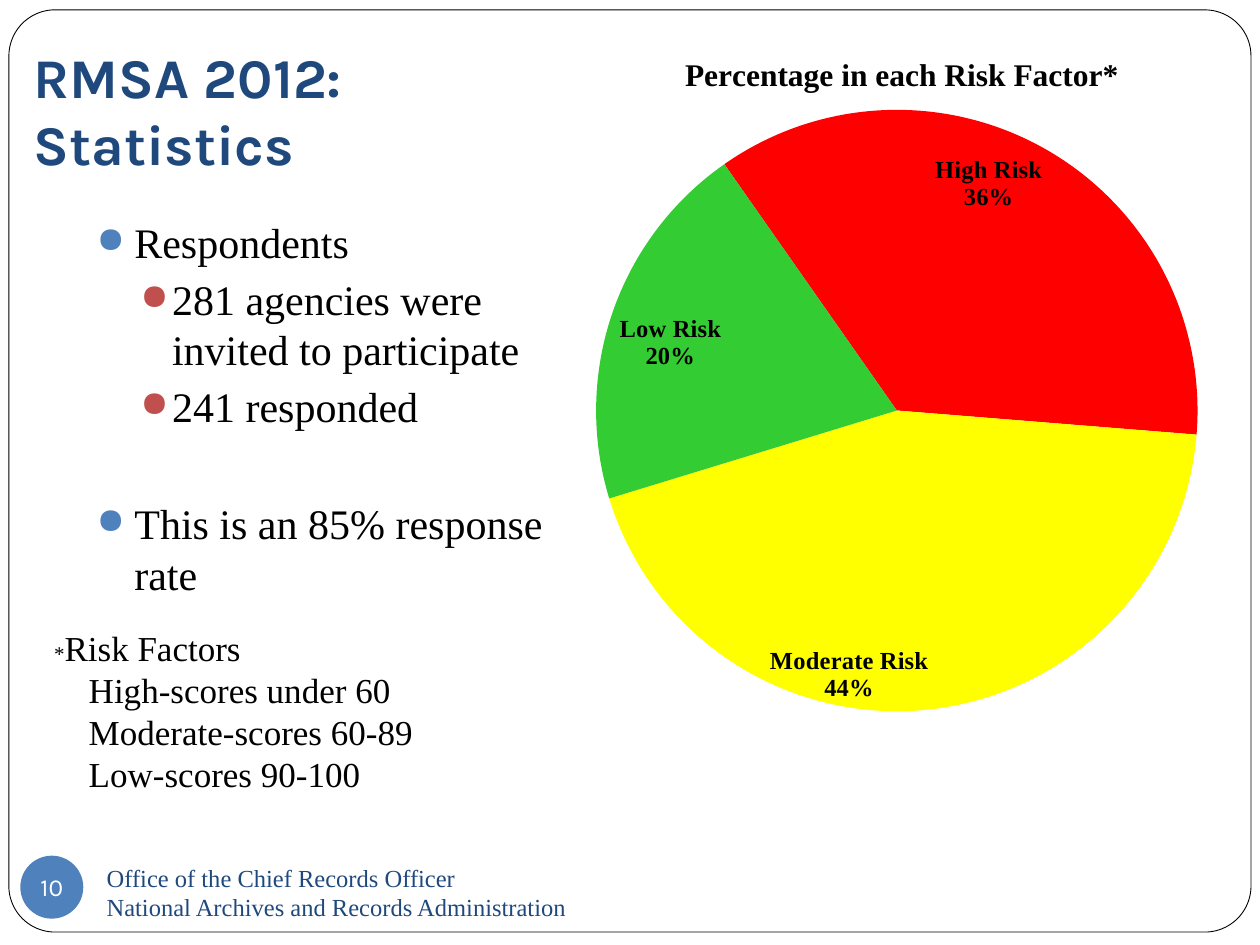
from lxml.etree import SubElement
from pptx import Presentation
from pptx.chart.data import CategoryChartData
from pptx.dml.color import RGBColor
from pptx.enum.chart import XL_CHART_TYPE, XL_LABEL_POSITION
from pptx.enum.shapes import MSO_SHAPE
from pptx.enum.text import MSO_ANCHOR, MSO_AUTO_SIZE, PP_ALIGN
from pptx.oxml import parse_xml
from pptx.oxml.ns import nsdecls, qn
from pptx.util import Cm, Pt

SERIF, SANS = "Times New Roman", "Karla"
NAVY, BLUE, BRICK, BLACK, WHITE = "1F497D", "4F81BD", "C0504D", "000000", "FFFFFF"

TITLE = "RMSA 2012: Statistics"
BULLETS = [
    ("Respondents", 0, 5.8),
    ("281 agencies were invited to participate", 1, 3.7),
    ("241 responded", 1, 3.7),
    ("This is an 85% response rate", 0, 38),
]
BULLET_LEVELS = [(0.76, 0.76, BLUE), (1.52, 0.64, BRICK)]
RISK_NOTES = ["High-scores under 60", "Moderate-scores 60-89", "Low-scores 90-100"]
FOOTER = ["Office of the Chief Records Officer", "National Archives and Records Administration"]
PAGE_NUMBER = "10"
CHART_TITLE = "Percentage in each Risk Factor*"
RISKS = [("High Risk", 36, "FF0000"), ("Moderate Risk", 44, "FFFF00"), ("Low Risk", 20, "33CC33")]
TITLE_LAYOUT = {"x": 0.16, "y": 0.04}
PIE_LAYOUT = {"x": 0.03, "y": 0.12, "w": 0.94, "h": 0.85}


def color(hex_string):
    return RGBColor.from_string(hex_string)


def set_font(font, size, hex_string=BLACK, name=SERIF, bold=False):
    font.size, font.name, font.bold = Pt(size), name, bold
    font.color.rgb = color(hex_string)


def indent(para, left, hanging=0):
    properties = para._p.get_or_add_pPr()
    properties.set("marL", str(Cm(left)))
    properties.set("indent", str(-Cm(hanging)))
    return properties


def add_bullet(para, level):
    left, hanging, bullet_color = BULLET_LEVELS[level]
    properties = indent(para, left, hanging)
    SubElement(SubElement(properties, qn("a:buClr")), qn("a:srgbClr"), val=bullet_color)
    SubElement(properties, qn("a:buSzPct"), val="85000")
    SubElement(properties, qn("a:buChar"), char="●")


def add_paragraphs(frame, lines, size, hex_string=BLACK):
    frame.word_wrap = True
    frame.text = "\n".join(lines)
    for para in frame.paragraphs:
        set_font(para.font, size, hex_string)
    return frame.paragraphs


def add_box(page, left, top, width, height):
    return page.shapes.add_textbox(Cm(left), Cm(top), Cm(width), Cm(height)).text_frame


def add_shape(page, kind, left, top, width, height, fill):
    shape = page.shapes.add_shape(kind, Cm(left), Cm(top), Cm(width), Cm(height))
    shape.shadow.inherit = False
    shape.fill.solid()
    shape.fill.fore_color.rgb = color(fill)
    return shape


def place(element, positions, inner=False):
    for old in element.findall(qn("c:layout")):
        element.remove(old)
    target = '<c:layoutTarget val="inner"/>' if inner else ""
    modes = "".join(f'<c:{key}Mode val="edge"/>' for key in "xy")
    values = "".join(f'<c:{key} val="{value}"/>' for key, value in positions.items())
    layout = parse_xml(f'<c:layout {nsdecls("c")}><c:manualLayout>{target}{modes}{values}'
                       '</c:manualLayout></c:layout>')
    text = element.find(qn("c:tx"))
    element.insert(0 if text is None else 1, layout)


def add_frame(page):
    frame = add_shape(page, MSO_SHAPE.ROUNDED_RECTANGLE, 0.18, 0.2, 25.04, 18.59, WHITE)
    frame.adjustments[0] = 0.05
    frame.line.color.rgb = color(BLACK)
    frame.line.width = Pt(0.5)


def add_title(page):
    title = page.shapes.title
    page.shapes._spTree.append(title._element)
    title.left, title.top, title.width, title.height = Cm(0.43), Cm(0.64), Cm(11.43), Cm(3.18)
    frame = title.text_frame
    frame.text = TITLE
    frame.auto_size = MSO_AUTO_SIZE.NONE
    frame.vertical_anchor = MSO_ANCHOR.BOTTOM
    frame.margin_bottom = Cm(0.25)
    para = frame.paragraphs[0]
    para.alignment = PP_ALIGN.LEFT
    set_font(para.font, 32, NAVY, SANS, True)


def add_footer(page):
    frame = add_box(page, 1.9, 17.35, 11, 1.27)
    frame.vertical_anchor = MSO_ANCHOR.MIDDLE
    add_paragraphs(frame, FOOTER, 14, NAVY)
    badge = add_shape(page, MSO_SHAPE.OVAL, 0.41, 17.25, 1.27, 1.27, BLUE)
    badge.line.fill.background()
    frame = badge.text_frame
    frame.margin_left = frame.margin_right = frame.margin_top = frame.margin_bottom = 0
    frame.word_wrap = False
    frame.vertical_anchor = MSO_ANCHOR.MIDDLE
    frame.text = PAGE_NUMBER
    para = frame.paragraphs[0]
    para.alignment = PP_ALIGN.CENTER
    set_font(para.font, 14, WHITE, SANS)


def add_body(page):
    frame = add_box(page, 1.7, 4.24, 10.41, 8.89)
    paras = add_paragraphs(frame, [text for text, _, _ in BULLETS], 24)
    for para, (_, level, space) in zip(paras, BULLETS):
        para.level = level
        para.space_before = Pt(space)
        add_bullet(para, level)


def add_chart(page):
    data = CategoryChartData(number_format="0")
    data.categories = [name for name, _, _ in RISKS]
    data.add_series("Series 1", [value for _, value, _ in RISKS])
    chart = page.shapes.add_chart(XL_CHART_TYPE.PIE, Cm(11.63), Cm(0.43), Cm(12.9), Cm(14.4), data).chart
    set_font(chart.font, 10)
    chart.has_legend = False
    chart.has_title = True
    title = chart.chart_title
    title.text_frame.text = CHART_TITLE
    set_font(title.text_frame.paragraphs[0].font, 18, bold=True)
    place(title._element, TITLE_LAYOUT)
    plot = chart.plots[0]
    place(chart._chartSpace.chart.plotArea, PIE_LAYOUT, inner=True)
    plot.vary_by_categories = True
    start = plot._element.find(qn("c:firstSliceAng"))
    if start is None:
        start = SubElement(plot._element, qn("c:firstSliceAng"))
    start.set("val", "325")
    for index, (_, _, fill) in enumerate(RISKS):
        slice_fill = plot.series[0].points[index].format.fill
        slice_fill.solid()
        slice_fill.fore_color.rgb = color(fill)
    labels = plot.series[0].data_labels
    labels.show_value = False
    labels.show_category_name = labels.show_percentage = True
    labels.number_format, labels.number_format_is_linked = "0%", False
    labels.position = XL_LABEL_POSITION.INSIDE_END
    set_font(labels.font, 14, bold=True)


def add_risk_notes(page):
    frame = add_box(page, 0.84, 12.5, 14.17, 4.45)
    heading, *notes = add_paragraphs(frame, ["*", *RISK_NOTES], 20)
    heading.runs[0].font.size = Pt(12)
    heading.add_run().text = "Risk Factors"
    for para in notes:
        indent(para, 0.7)


def main():
    deck = Presentation()
    deck.slide_width, deck.slide_height = Cm(25.4), Cm(19.05)
    page = deck.slides.add_slide(deck.slide_layouts[5])
    add_frame(page)
    add_title(page)
    add_footer(page)
    add_body(page)
    add_chart(page)
    add_risk_notes(page)
    deck.save("out.pptx")


if __name__ == "__main__":
    main()
